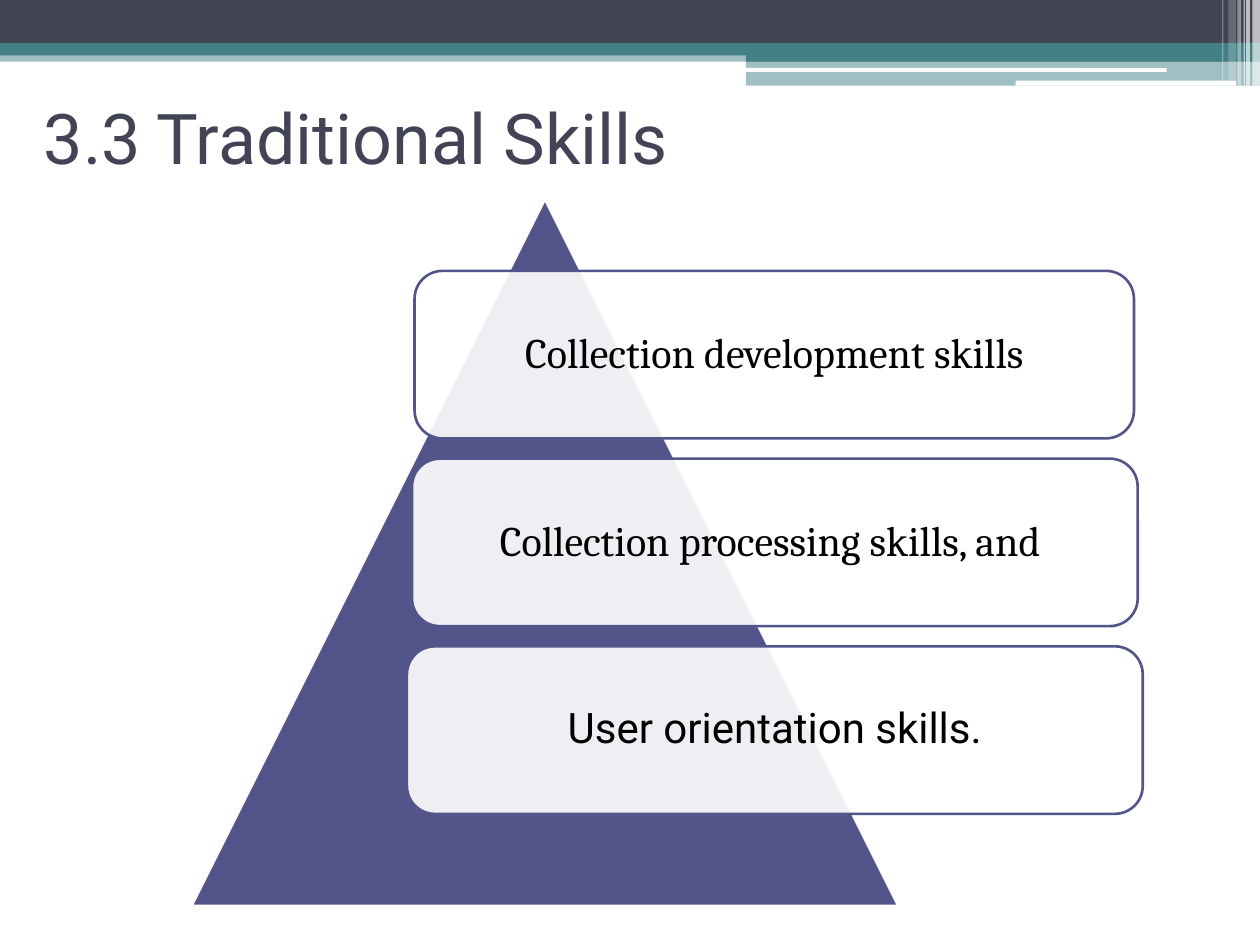
from lxml import etree
from pptx import Presentation
from pptx.dml.color import RGBColor
from pptx.enum import shapes, text
from pptx.oxml import ns
from pptx.util import Inches, Pt

WHITE = RGBColor(0xFF, 0xFF, 0xFF)
BLACK = RGBColor(0x00, 0x00, 0x00)
SLATE = RGBColor(0x42, 0x44, 0x56)
TEAL = RGBColor(0x43, 0x80, 0x86)
INDIGO = RGBColor(0x53, 0x54, 0x8A)

RECT = shapes.MSO_SHAPE.RECTANGLE
ROUNDED = shapes.MSO_SHAPE.ROUNDED_RECTANGLE
TRIANGLE = shapes.MSO_SHAPE.ISOSCELES_TRIANGLE

deck = Presentation()
deck.slide_width, deck.slide_height = Inches(10), Inches(7.5)
page = deck.slides.add_slide(deck.slide_layouts[6])


def add_block(kind, left, top, width, height, fill, opacity=100, line=None):
    """Add a filled preset shape; opacity is a percentage."""
    block = page.shapes.add_shape(
        kind, Inches(left), Inches(top), Inches(width), Inches(height))
    block.shadow.inherit = False
    block.fill.solid()
    block.fill.fore_color.rgb = fill
    if opacity < 100:
        color = block.fill._xPr.find(".//" + ns.qn("a:srgbClr"))
        etree.SubElement(color, ns.qn("a:alpha"), val=str(opacity * 1000))
    if line is None:
        block.line.fill.background()
    else:
        block.line.color.rgb = line
        block.line.width = Pt(1.5)
    return block


def write(box, words, *, size, font, color, align, spacing=1.0, inset=0.1):
    frame = box.text_frame
    frame.word_wrap = True
    frame.vertical_anchor = text.MSO_ANCHOR.MIDDLE
    frame.margin_left = frame.margin_right = Inches(0.1)
    frame.margin_top = frame.margin_bottom = Inches(inset)
    para = frame.paragraphs[0]
    para.alignment = align
    para.line_spacing = spacing
    span = para.add_run()
    span.text = words
    span.font.size = Pt(size)
    span.font.name = font
    span.font.color.rgb = color


# Header bands
for left, top, width, height, fill, opacity in [
    (0, 0.4, 10, 0.09, TEAL, 50),
    (0, 0, 10, 0.34, SLATE, 100),
    (0, 0.34, 10, 0.1, TEAL, 100),
    (5.92, 0.39, 4.08, 0.1, TEAL, 100),
    (5.92, 0.48, 4.08, 0.2, TEAL, 50),
]:
    add_block(RECT, left, top, width, height, fill, opacity)

add_block(ROUNDED, 5.91, 0.54, 3.35, 0.03, WHITE)
add_block(ROUNDED, 8.06, 0.64, 1.75, 0.04, WHITE)

# Translucent stripes at the right end of the header
for left, width, height, opacity in [
    (9.94, 0.06, 0.68, 65),
    (9.89, 0.03, 0.68, 65),
    (9.87, 0.01, 0.68, 60),
    (9.82, 0.03, 0.68, 40),
    (9.75, 0.06, 0.64, 20),
    (9.7, 0.01, 0.64, 30),
]:
    add_block(RECT, left, 0, width, height, WHITE, opacity)

title = page.shapes.add_textbox(Inches(0.25), Inches(0.5), Inches(9), Inches(1.17))
write(title, "3.3 Traditional Skills", size=40, font="Roboto", color=SLATE,
      align=text.PP_ALIGN.LEFT, inset=0.05)

# Pyramid with one card per skill
add_block(TRIANGLE, 1.52, 1.58, 5.61, 5.61, INDIGO, line=WHITE)

CARD_TOP, CARD_HEIGHT, CARD_STEP = 2.15, 1.33, 1.49
skills = [
    (3.29, 5.71, "Collection development skills", "Cambria"),
    (3.27, 5.76, "Collection processing skills, and ", "Cambria"),
    (3.23, 5.84, "User orientation skills.", "Roboto"),
]
for row, (left, width, words, font) in enumerate(skills):
    card = add_block(ROUNDED, left, CARD_TOP + row * CARD_STEP, width, CARD_HEIGHT,
                     WHITE, opacity=90, line=INDIGO)
    write(card, words, size=24, font=font, color=BLACK,
          align=text.PP_ALIGN.CENTER, spacing=0.9)

deck.save("out.pptx")
